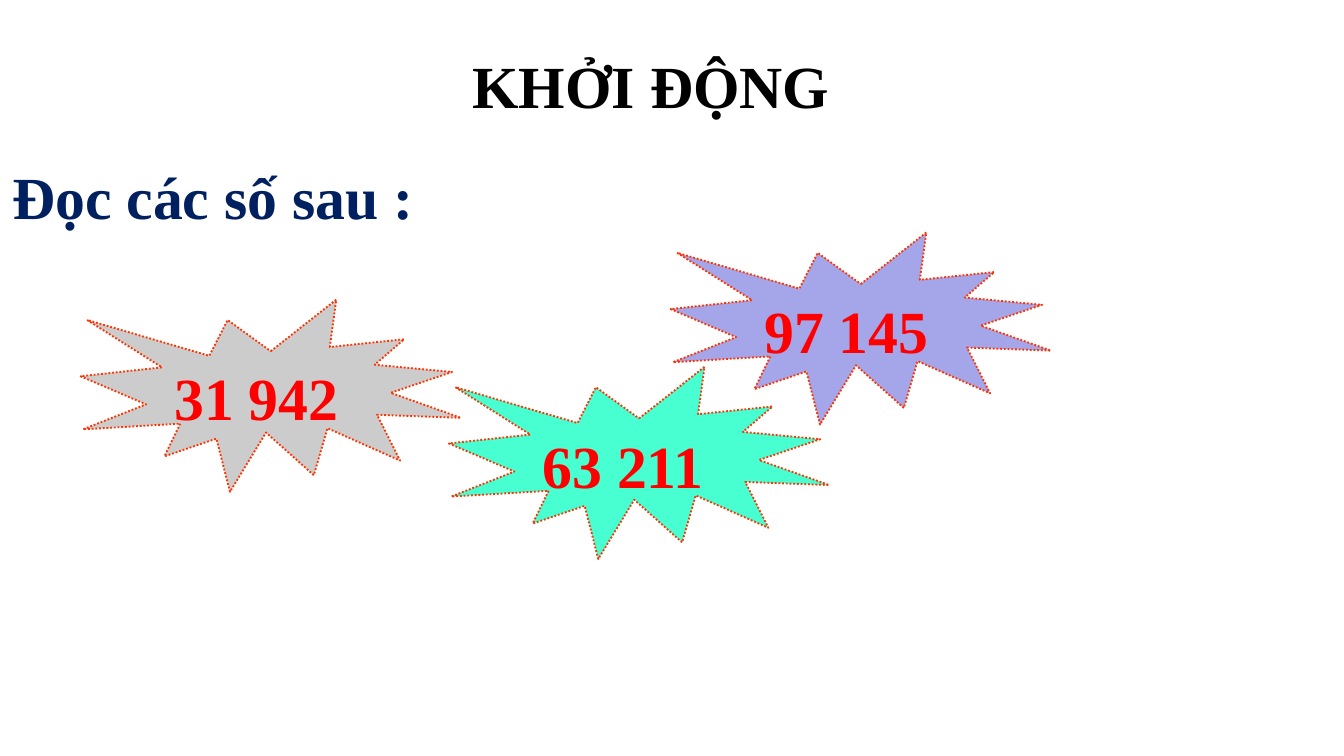
from dataclasses import dataclass

from pptx import Presentation
from pptx.dml.color import RGBColor
from pptx.enum.dml import MSO_LINE_DASH_STYLE as DASH
from pptx.enum.shapes import MSO_SHAPE as SHAPE
from pptx.enum.text import MSO_ANCHOR as ANCHOR, MSO_AUTO_SIZE as AUTO, PP_ALIGN as ALIGN
from pptx.slide import Slide
from pptx.text.text import TextFrame
from pptx.util import Inches, Pt


@dataclass(frozen=True)
class Theme:
    font: str = "Times New Roman"
    size: int = 32
    title: str = "000000"
    prompt: str = "002060"
    number: str = "FF0000"
    outline: str = "FF3300"
    gray: str = "CCCCCC"
    lilac: str = "A5A5E9"
    mint: str = "47FFD1"


@dataclass(frozen=True)
class Burst:
    text: str
    left: float
    top: float
    fill: str


THEME = Theme()
SLIDE_WIDTH = Inches(10)
SLIDE_HEIGHT = SLIDE_WIDTH * 9 // 16
BURST_WIDTH, BURST_HEIGHT = 2.83, 1.43
BURSTS = [
    Burst("31 942", 0.6, 2.23, THEME.gray),
    Burst("97 145", 4.99, 1.73, THEME.lilac),
    Burst("63 211", 3.34, 2.73, THEME.mint),
]


def write(tf: TextFrame, text: str, *, color: str, align: ALIGN = ALIGN.LEFT,
          wrap: bool = False, inset_y: float = 0.04, inset_x: float = 0.09,
          auto_size: AUTO = AUTO.NONE) -> None:
    tf.word_wrap = wrap
    tf.auto_size = auto_size
    tf.vertical_anchor = ANCHOR.TOP
    tf.margin_left = tf.margin_right = Inches(inset_x)
    tf.margin_top = tf.margin_bottom = Inches(inset_y)
    p = tf.paragraphs[0]
    p.alignment = align
    r = p.add_run()
    r.text = text
    r.font.name = THEME.font
    r.font.size = Pt(THEME.size)
    r.font.bold = True
    r.font.color.rgb = RGBColor.from_string(color)


def draw_burst(s: Slide, burst: Burst) -> None:
    sp = s.shapes.add_shape(SHAPE.EXPLOSION1, Inches(burst.left), Inches(burst.top),
                            Inches(BURST_WIDTH), Inches(BURST_HEIGHT))
    sp.shadow.inherit = False
    sp.fill.solid()
    sp.fill.fore_color.rgb = RGBColor.from_string(burst.fill)
    sp.line.color.rgb = RGBColor.from_string(THEME.outline)
    sp.line.width = Pt(1)
    sp.line.dash_style = DASH.ROUND_DOT
    write(sp.text_frame, burst.text, color=THEME.number, wrap=True)


def main() -> None:
    prs = Presentation()
    prs.slide_width, prs.slide_height = SLIDE_WIDTH, SLIDE_HEIGHT
    s = prs.slides.add_slide(prs.slide_layouts[5])

    title = s.shapes.title
    title.left, title.top = Inches(2.61), Inches(0.31)
    title.width, title.height = Inches(4.47), Inches(0.5)
    write(title.text_frame, "KHỞI ĐỘNG", color=THEME.title, align=ALIGN.CENTER,
          inset_x=0.1, inset_y=0.05)

    prompt = s.shapes.add_textbox(Inches(0), Inches(1.15), Inches(3.2), Inches(0.63))
    write(prompt.text_frame, "Đọc các số sau :", color=THEME.prompt,
          auto_size=AUTO.SHAPE_TO_FIT_TEXT)

    for burst in BURSTS:
        draw_burst(s, burst)

    prs.save("out.pptx")


if __name__ == "__main__":
    main()
